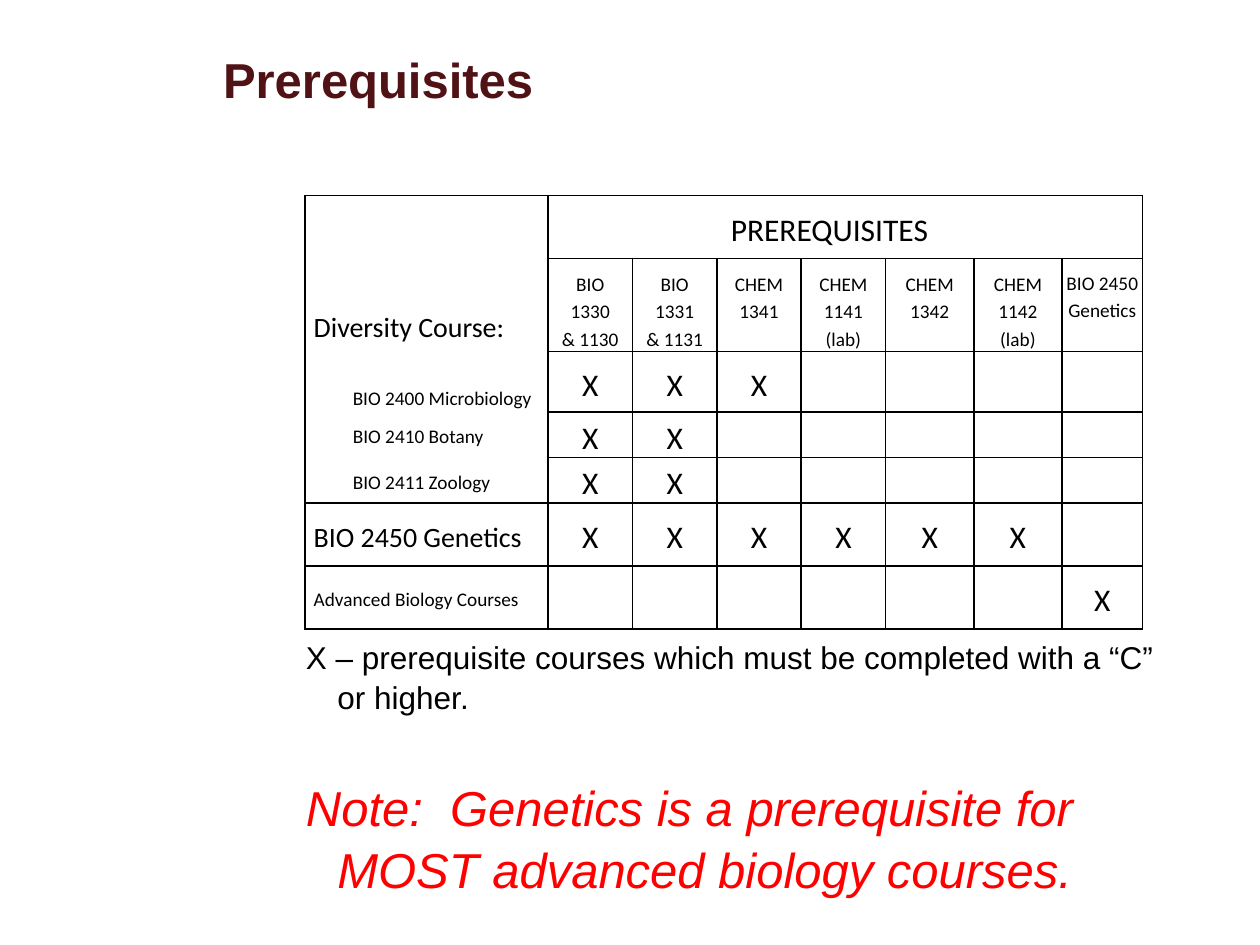
from lxml import etree
from pptx import Presentation
from pptx.dml.color import RGBColor
from pptx.enum.text import MSO_ANCHOR, PP_ALIGN
from pptx.oxml.ns import qn
from pptx.util import Inches, Pt

LEFT, CENTER = PP_ALIGN.LEFT, PP_ALIGN.CENTER
TOP, MIDDLE = MSO_ANCHOR.TOP, MSO_ANCHOR.MIDDLE
COLORS = {"title": "501215", "text": "000000", "note": "FF0000", "border": "000000"}
PLAIN_TABLE_STYLE = "{2D5ABB26-0587-4C30-8999-92F81FD0307C}"


def format_paragraph(paragraph, size, font="Calibri", color="text", align=LEFT, spacing=1.15, **styles):
    paragraph.alignment = align
    paragraph.line_spacing = spacing
    paragraph.font.color.rgb = RGBColor.from_string(COLORS[color])
    for name, value in {"size": Pt(size), "name": font, **styles}.items():
        setattr(paragraph.font, name, value)


def draw_borders(cell, sides):
    properties = cell._tc.get_or_add_tcPr()
    for position, side in enumerate("LRTB"):
        line = etree.Element(qn(f"a:ln{side}"), w=str(Pt(1)))
        if side in sides:
            fill = etree.SubElement(line, qn("a:solidFill"))
            etree.SubElement(fill, qn("a:srgbClr"), val=COLORS["border"])
        else:
            etree.SubElement(line, qn("a:noFill"))
        properties.insert(position, line)


prs = Presentation()
prs.slide_width, prs.slide_height = Inches(10), Inches(7.5)
slide = prs.slides.add_slide(prs.slide_layouts[5])

title = slide.shapes.title
title.left, title.top, title.width, title.height = Inches(1.67), Inches(0), Inches(7.58), Inches(1.25)
title.text_frame.text = "Prerequisites"
title.text_frame.vertical_anchor = MIDDLE
format_paragraph(title.text_frame.paragraphs[0], 28, "Arial", "title", spacing=1.0, bold=True)

column_widths = [1.93, 0.67, 0.67, 0.67, 0.67, 0.7, 0.7, 0.64]
row_heights = [0.5, 0.36, 0.36, 0.48, 0.36, 0.36, 0.5, 0.5]
table = slide.shapes.add_table(
    len(row_heights), len(column_widths), Inches(2.42), Inches(1.55), Inches(6.65), Inches(3.42)
).table
table.first_row = table.horz_banding = False
table._tbl.tblPr[0].text = PLAIN_TABLE_STYLE
for column, width in zip(table.columns, column_widths):
    column.width = Inches(width)
for row, height in zip(table.rows, row_heights):
    row.height = Inches(height)

prerequisites = [
    "BIO 1330\n& 1130", "BIO 1331\n& 1131", "CHEM 1341", "CHEM 1141\n(lab)",
    "CHEM 1342", "CHEM 1142\n(lab)", "BIO 2450\nGenetics",
]
required = {3: [1, 2, 3], 4: [1, 2], 5: [1, 2], 6: [1, 2, 3, 4, 5, 6], 7: [7]}
first_column_sides = {0: "LTR", 1: "LR", 2: "LR", 3: "LR", 4: "LR", 5: "LRB"}

for r in range(len(row_heights)):
    for c in range(len(column_widths)):
        cell = table.cell(r, c)
        cell.fill.background()
        if c == 0:
            sides = first_column_sides.get(r, "LRTB")
        else:
            sides = {1: "LRT", 2: "LRB"}.get(r, "LRTB")
        draw_borders(cell, sides)
        side_margin = 0 if c == 7 else 0.07
        margins = {"left": side_margin, "right": side_margin, "top": 0.01, "bottom": 0}
        for side, margin in margins.items():
            setattr(cell, f"margin_{side}", Inches(margin))
        cell.vertical_anchor = MIDDLE
        marked = c in required.get(r, [])
        if marked:
            cell.text = "X"
        format_paragraph(cell.text_frame.paragraphs[0], 18 if marked else 11, align=CENTER)

table.cell(0, 0).merge(table.cell(1, 0))
table.cell(2, 0).merge(table.cell(3, 0))
table.cell(0, 1).merge(table.cell(0, 7))
for c, prerequisite in enumerate(prerequisites, start=1):
    heading = table.cell(1, c)
    heading.merge(table.cell(2, c))
    heading.text = prerequisite
    heading.vertical_anchor = TOP
    heading.margin_top = Inches(0.08 if c == 7 else 0.09)
    for paragraph in heading.text_frame.paragraphs:
        format_paragraph(paragraph, 11, align=CENTER)

left_labels = [
    (0, 1, "PREREQUISITES", 18, 1.45),
    (2, 0, "Diversity Course:\nBIO 2400 Microbiology", 16, 0.07),
    (4, 0, "BIO 2410 Botany", 11, 0.38),
    (5, 0, "BIO 2411 Zoology", 11, 0.38),
    (6, 0, "BIO 2450 Genetics", 16, 0.07),
    (7, 0, "Advanced Biology Courses", 11, 0.07),
]
for r, c, label, size, indent in left_labels:
    cell = table.cell(r, c)
    cell.text = label
    cell.margin_left = Inches(indent)
    format_paragraph(cell.text_frame.paragraphs[0], size)

diversity, microbiology = table.cell(2, 0).text_frame.paragraphs
table.cell(2, 0).margin_right = Inches(0)
diversity.space_after = Pt(22)
format_paragraph(microbiology, 11)
microbiology._p.get_or_add_pPr().set("marL", str(Inches(0.31)))

remarks = slide.shapes.add_textbox(Inches(1.33), Inches(5), Inches(8.08), Inches(1.92)).text_frame
remarks.word_wrap = True
remarks.text = (
    "X – prerequisite courses which must be completed with a “C” or higher.\n"
    "Note:  Genetics is a prerequisite for MOST advanced biology courses."
)
legend, note = remarks.paragraphs
format_paragraph(legend, 18, "Arial", spacing=1.05)
format_paragraph(note, 28, "Arial", "note", spacing=1.05, italic=True)
note.space_before = Pt(34)
for paragraph in remarks.paragraphs:
    properties = paragraph._p.get_or_add_pPr()
    properties.set("marL", str(Inches(1.25)))
    properties.set("indent", str(Inches(-0.25)))

prs.save("out.pptx")
